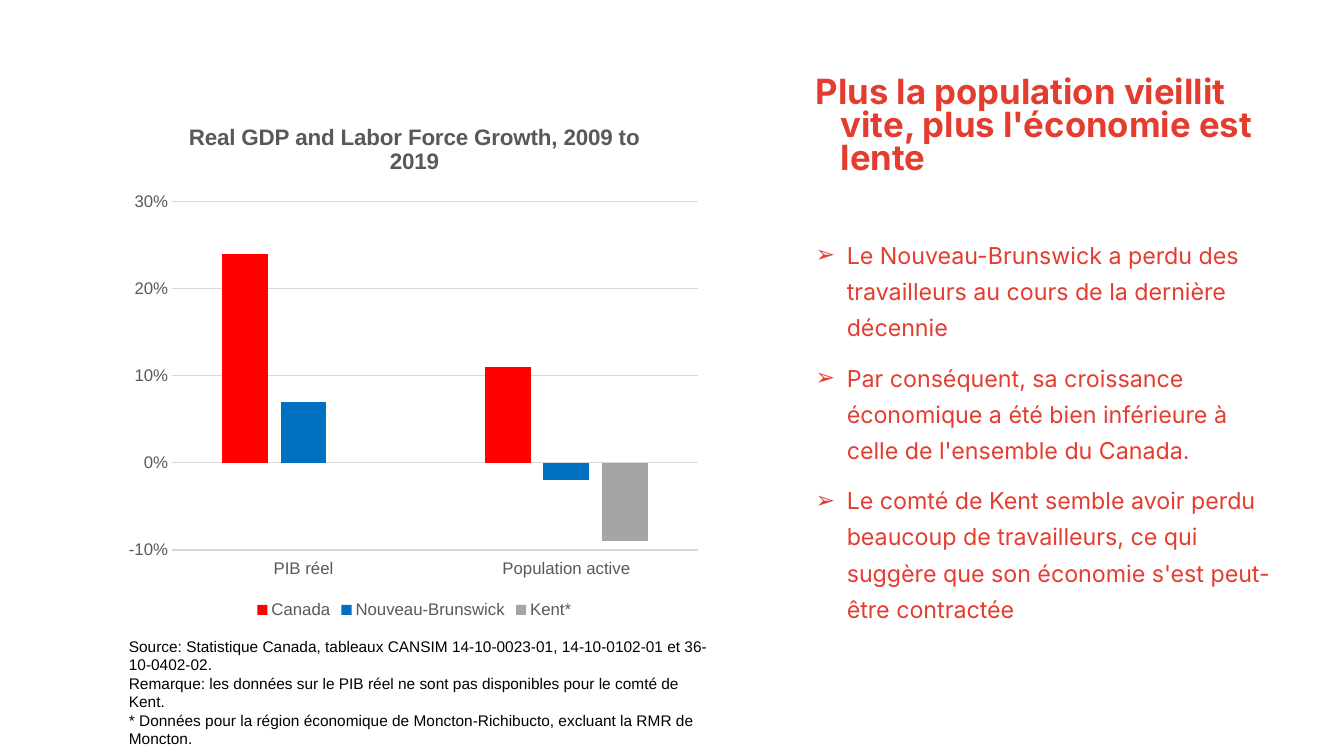
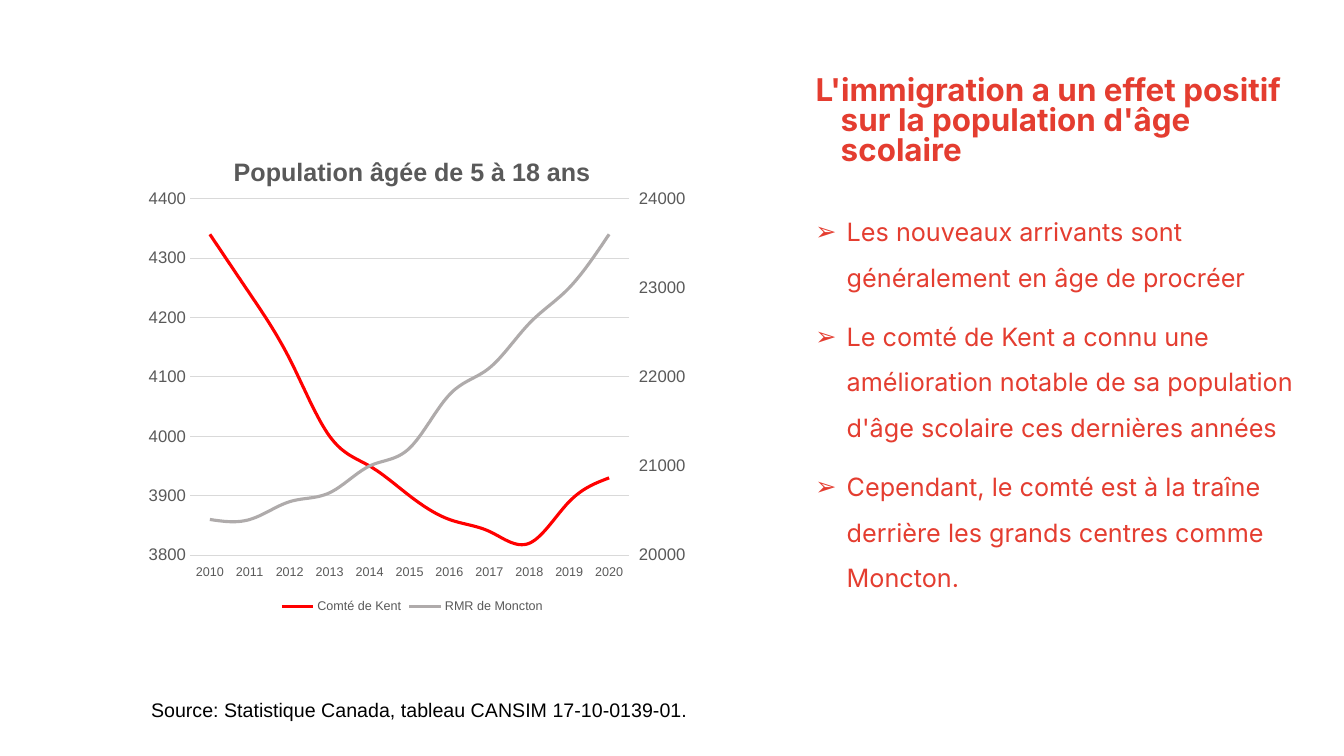
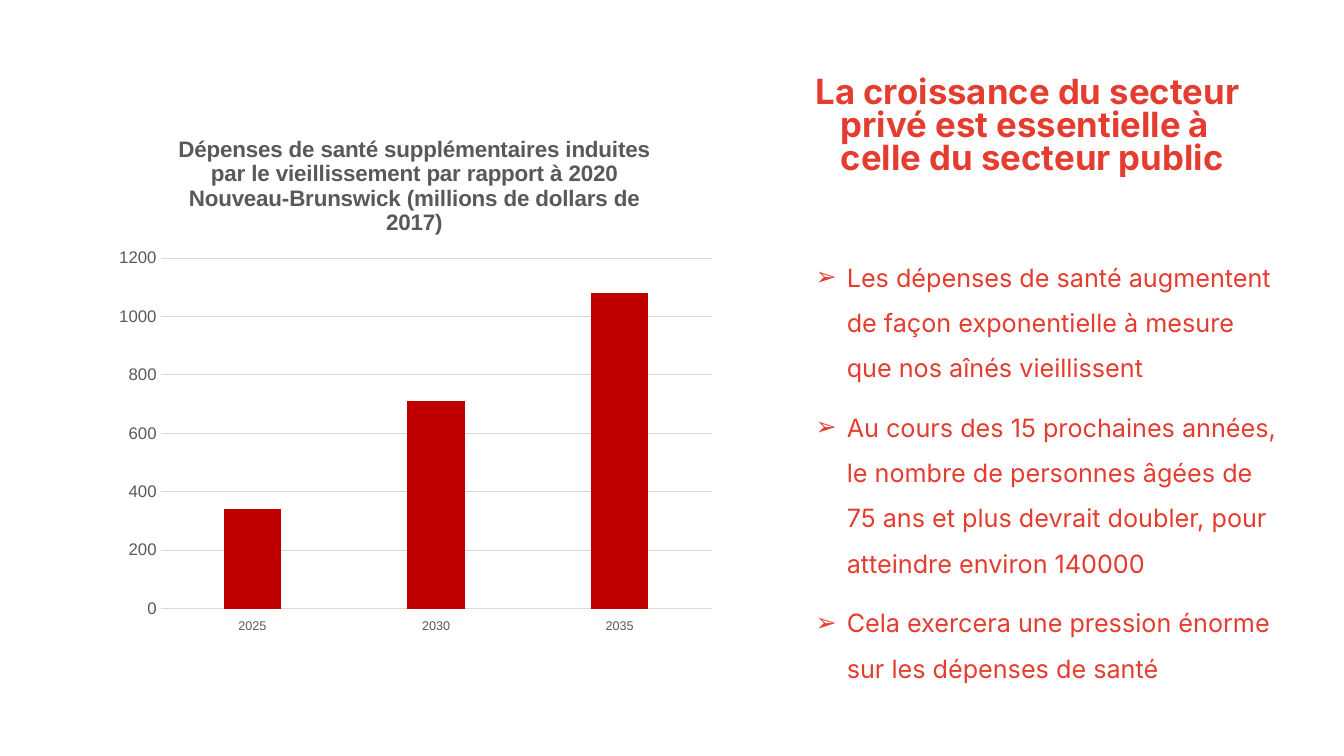
import copy

import lxml.etree
import pptx
import pptx.chart.axis
import pptx.chart.data
import pptx.dml.color
import pptx.enum.chart
import pptx.oxml.ns
import pptx.util

Inches = pptx.util.Inches
Pt = pptx.util.Pt
RGBColor = pptx.dml.color.RGBColor
ChartType = pptx.enum.chart.XL_CHART_TYPE
TickMark = pptx.enum.chart.XL_TICK_MARK
qn = pptx.oxml.ns.qn

CORAL = RGBColor(0xE4, 0x3D, 0x30)
BLACK = RGBColor(0, 0, 0)
DARK_GREY = RGBColor(0x59, 0x59, 0x59)
GRID_GREY = RGBColor(0xD9, 0xD9, 0xD9)
RED = RGBColor(0xFF, 0, 0)
BLUE = RGBColor(0, 0x70, 0xC0)
GREY = RGBColor(0xA5, 0xA5, 0xA5)
WARM_GREY = RGBColor(0xAF, 0xAB, 0xAB)
DARK_RED = RGBColor(0xC0, 0, 0)
TEXT_FONT = "Inter"
CHART_FONT = "Arial"
TEXT_LEFT = 7.74


def style_font(font, size, color, name, bold=False):
    font.size = Pt(size)
    font.name = name
    font.bold = bold
    font.color.rgb = color


def add_child(parent, tag, **attributes):
    return lxml.etree.SubElement(parent, qn(tag), attributes)


def add_text(slide, box, lines, size, color, name, bold=False, spacing=None,
             gap=0, indent=(0, 0), bullet=None):
    frame = slide.shapes.add_textbox(*map(Inches, box)).text_frame
    frame.word_wrap = True
    for index, line in enumerate(lines):
        paragraph = frame.paragraphs[0] if index == 0 else frame.add_paragraph()
        properties = paragraph._p.get_or_add_pPr()
        margin, first = indent
        properties.set("marL", str(Inches(margin)))
        properties.set("indent", str(Inches(first)))
        if bullet:
            tint = add_child(properties, "a:buClr")
            add_child(tint, "a:srgbClr", val=str(color))
            add_child(properties, "a:buFont", typeface=CHART_FONT)
            add_child(properties, "a:buChar", char=bullet)
        if spacing:
            paragraph.line_spacing = spacing
        if index and gap:
            paragraph.space_before = Pt(gap)
        run = paragraph.add_run()
        run.text = line
        style_font(run.font, size, color, name, bold)


def add_message(slide, title, title_size, title_height, points, points_box,
                points_size, spacing):
    add_text(slide, (TEXT_LEFT, 0.72, 5.09, title_height), [title], title_size,
             CORAL, TEXT_FONT, bold=True, spacing=0.8, indent=(0.5, -0.25))
    add_text(slide, points_box, points, points_size, CORAL, TEXT_FONT,
             spacing=spacing, gap=10, indent=(0.56, -0.31), bullet="➢")


def add_source(slide, box, lines, size):
    add_text(slide, box, lines, size, BLACK, CHART_FONT)


def set_plot_area(chart, area):
    plot_area = chart.element.find(".//" + qn("c:plotArea"))
    for old_layout in plot_area.findall(qn("c:layout")):
        plot_area.remove(old_layout)
    layout = plot_area.makeelement(qn("c:layout"))
    plot_area.insert(0, layout)
    manual = add_child(layout, "c:manualLayout")
    add_child(manual, "c:layoutTarget", val="inner")
    for side in "xy":
        add_child(manual, f"c:{side}Mode", val="edge")
    for side, share in zip("xywh", area):
        add_child(manual, f"c:{side}", val=str(share))


def set_scale(axis, low, high, step):
    axis.minimum_scale = low
    axis.maximum_scale = high
    axis.major_unit = step


def style_axes(chart, category_size, number_format, scale):
    years, values = chart.category_axis, chart.value_axis
    for axis, size in ((years, category_size), (values, 12)):
        axis.major_tick_mark = TickMark.NONE
        axis.minor_tick_mark = TickMark.NONE
        style_font(axis.tick_labels.font, size, DARK_GREY, CHART_FONT)
    years.has_major_gridlines = False
    years.tick_label_position = pptx.enum.chart.XL_TICK_LABEL_POSITION.LOW
    values.has_major_gridlines = True
    for line in (years.format.line, values.major_gridlines.format.line):
        line.color.rgb = GRID_GREY
        line.width = Pt(0.75)
    values.format.line.fill.background()
    values.tick_labels.number_format = number_format
    values.tick_labels.number_format_is_linked = False
    set_scale(values, *scale)


def add_chart(slide, box, kind, title, title_size, categories, series, area,
              scale, category_size=9, number_format="0", legend_size=None):
    data = pptx.chart.data.CategoryChartData()
    data.categories = categories
    for name, values, _ in series:
        data.add_series(name, values)
    chart = slide.shapes.add_chart(kind, *map(Inches, box), data).chart
    style_font(chart.font, 10, BLACK, CHART_FONT)
    chart.has_title = True
    heading = chart.chart_title.text_frame
    for index, line in enumerate(title):
        paragraph = heading.paragraphs[0] if index == 0 else heading.add_paragraph()
        run = paragraph.add_run()
        run.text = line
        style_font(run.font, title_size, DARK_GREY, CHART_FONT, bold=True)
    chart.chart_title.include_in_layout = False
    chart.has_legend = legend_size is not None
    if chart.has_legend:
        chart.legend.position = pptx.enum.chart.XL_LEGEND_POSITION.BOTTOM
        chart.legend.include_in_layout = False
        style_font(chart.legend.font, legend_size, DARK_GREY, CHART_FONT)
    style_axes(chart, category_size, number_format, scale)
    set_plot_area(chart, area)
    plot = chart.plots[0]
    plot.vary_by_categories = False
    for item, (_, _, color) in zip(plot.series, series):
        if kind == ChartType.LINE:
            item.smooth = True
            item.format.line.color.rgb = color
            item.format.line.width = Pt(2.25)
        else:
            item.invert_if_negative = False
            item.format.fill.solid()
            item.format.fill.fore_color.rgb = color
    if kind == ChartType.COLUMN_CLUSTERED:
        plot.gap_width = 219
        plot.overlap = -27
    return chart


def move_last_series_right(chart, scale):
    left_lines = chart.element.find(".//" + qn("c:lineChart"))
    right_lines = copy.deepcopy(left_lines)
    left_lines.remove(left_lines.findall(qn("c:ser"))[-1])
    for series in right_lines.findall(qn("c:ser"))[:-1]:
        right_lines.remove(series)
    left_lines.addnext(right_lines)
    category_id, value_id = "50010", "50020"
    for reference, number in zip(right_lines.findall(qn("c:axId")),
                                 (category_id, value_id)):
        reference.set("val", number)

    plot_area = left_lines.getparent()
    left_values = plot_area.find(qn("c:valAx"))
    right_values = copy.deepcopy(left_values)
    hidden_years = copy.deepcopy(plot_area.find(qn("c:catAx")))
    left_values.addnext(right_values)
    right_values.addnext(hidden_years)
    for axis, own, other in ((right_values, value_id, category_id),
                             (hidden_years, category_id, value_id)):
        axis.find(qn("c:axId")).set("val", own)
        axis.find(qn("c:crossAx")).set("val", other)
    right_values.find(qn("c:axPos")).set("val", "r")
    right_values.find(qn("c:crosses")).set("val", "max")
    right_axis = pptx.chart.axis.ValueAxis(right_values)
    right_axis.has_major_gridlines = False
    right_axis.major_tick_mark = TickMark.OUTSIDE
    set_scale(right_axis, *scale)
    pptx.chart.axis.CategoryAxis(hidden_years).visible = False


def build_economy(slide):
    add_message(
        slide, "Plus la population vieillit vite, plus l'économie est lente", 24.8, 1.3,
        ["Le Nouveau-Brunswick a perdu des travailleurs au cours de la dernière décennie",
         "Par conséquent, sa croissance économique a été bien inférieure à celle de "
         "l'ensemble du Canada.",
         "Le comté de Kent semble avoir perdu beaucoup de travailleurs, ce qui suggère "
         "que son économie s'est peut-être contractée"],
        (TEXT_LEFT, 2.26, 5.09, 4.33), 16.6, 1.3)
    add_chart(
        slide, (1.18, 1.02, 5.86, 5.16), ChartType.COLUMN_CLUSTERED,
        ["Real GDP and Labor Force Growth, 2009 to 2019"], 16,
        ["PIB réel", "Population active"],
        [("Canada", (0.24, 0.11), RED),
         ("Nouveau-Brunswick", (0.07, -0.02), BLUE),
         ("Kent*", (None, -0.09), GREY)],
        (0.09, 0.19, 0.89, 0.67), (-0.1, 0.3, 0.1),
        category_size=12, number_format="0%", legend_size=12)
    add_source(
        slide, (1.18, 6.27, 6, 1.21),
        ["Source: Statistique Canada, tableaux CANSIM 14-10-0023-01, 14-10-0102-01 et "
         "36-10-0402-02.",
         "Remarque: les données sur le PIB réel ne sont pas disponibles pour le comté de "
         "Kent.",
         "* Données pour la région économique de Moncton-Richibucto, excluant la RMR de "
         "Moncton."], 11)


def build_immigration(slide):
    add_message(
        slide, "L'immigration a un effet positif sur la population d'âge scolaire",
        22.4, 1.23,
        ["Les nouveaux arrivants sont généralement en âge de procréer",
         "Le comté de Kent a connu une amélioration notable de sa population d'âge "
         "scolaire ces dernières années",
         "Cependant, le comté est à la traîne derrière les grands centres comme Moncton."],
        (TEXT_LEFT, 1.95, 5.27, 4.78), 18, 1.5)
    chart = add_chart(
        slide, (1.4, 1.35, 5.4, 4.78), ChartType.LINE,
        ["Population âgée de 5 à 18 ans"], 18,
        [str(year) for year in range(2010, 2021)],
        [("Comté de Kent",
          (4340, 4240, 4130, 4000, 3950, 3900, 3860, 3840, 3820, 3890, 3930), RED),
         ("RMR de Moncton",
          (20400, 20400, 20600, 20700, 21000, 21200, 21800, 22100, 22600, 23000, 23600),
          WARM_GREY)],
        (0.09, 0.13, 0.81, 0.74), (3800, 4400, 100), legend_size=9)
    move_last_series_right(chart, (20000, 24000, 1000))
    add_source(slide, (1.4, 6.87, 9.36, 0.34),
               ["Source: Statistique Canada, tableau CANSIM 17-10-0139-01."], 14)


def build_health(slide):
    add_message(
        slide, "La croissance du secteur privé est essentielle à celle du secteur public",
        24.8, 1.3,
        ["Les dépenses de santé augmentent de façon exponentielle à mesure que nos aînés "
         "vieillissent",
         "Au cours des 15 prochaines années, le nombre de personnes âgées de 75 ans et "
         "plus devrait doubler, pour atteindre environ 140000",
         "Cela exercera une pression énorme sur les dépenses de santé"],
        (TEXT_LEFT, 2.4, 5.09, 4.77), 18, 1.5)
    add_chart(
        slide, (1.04, 1.16, 6.14, 5.19), ChartType.COLUMN_CLUSTERED,
        ["Dépenses de santé supplémentaires induites par le vieillissement par rapport "
         "à 2020",
         "Nouveau-Brunswick (millions de dollars de 2017)"], 16,
        ["2025", "2030", "2035"],
        [("Series 1", (340, 710, 1080), DARK_RED)],
        (0.09, 0.27, 0.89, 0.67), (0, 1200, 200))


def main():
    deck = pptx.Presentation()
    deck.slide_width = Inches(13.33)
    deck.slide_height = Inches(7.5)
    blank = deck.slide_layouts[6]
    for build in (build_economy, build_immigration, build_health):
        build(deck.slides.add_slide(blank))
    deck.save("out.pptx")


if __name__ == "__main__":
    main()
